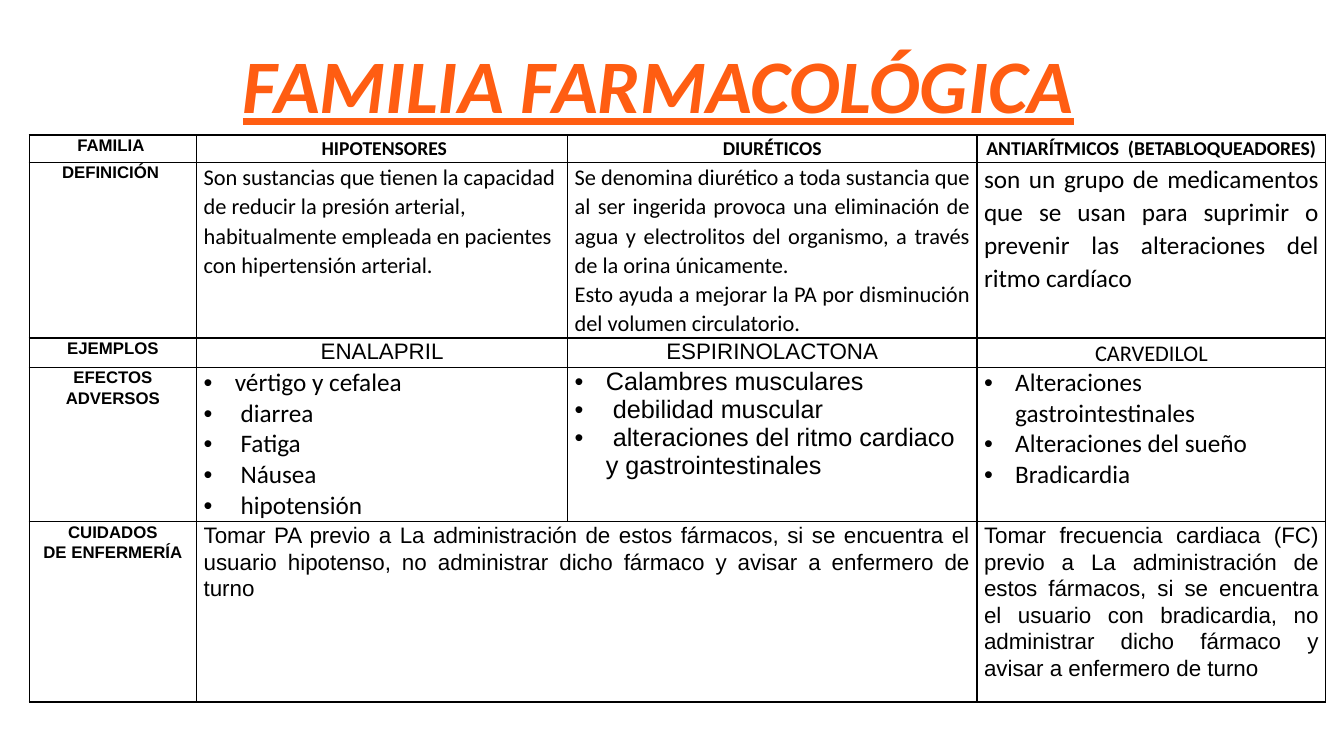
from lxml.etree import SubElement
from pptx import Presentation
from pptx.dml.color import RGBColor
from pptx.enum.text import MSO_AUTO_SIZE, PP_ALIGN
from pptx.oxml.ns import qn
from pptx.util import Inches, Pt

BLACK = RGBColor(0x00, 0x00, 0x00)
ORANGE = RGBColor(0xFF, 0x5D, 0x12)

COLUMN_WIDTHS = (1.66, 3.68, 4.06, 3.46)
ROW_HEIGHTS = (0.27, 1.74, 0.29, 1.53, 1.79)

LABEL = dict(size=12, font="Arial", bold=True)
HEADING = dict(size=14, font="Calibri", bold=True)
CENTERED = dict(size=16, font="Arial")
JUSTIFIED = dict(size=16, font="Arial", align=PP_ALIGN.JUSTIFY)
CALIBRI_LIST = dict(size=18, font="Calibri", bullet=True)

FAMILIES = [
    [
        (["FAMILIA "], LABEL),
        ([" HIPOTENSORES"], HEADING),
        (["DIURÉTICOS"], HEADING),
        (["ANTIARÍTMICOS  (BETABLOQUEADORES)"], HEADING),
    ],
    [
        (["DEFINICIÓN "], LABEL),
        (["Son sustancias que tienen la capacidad de reducir la presión arterial, "
          "habitualmente empleada en pacientes con hipertensión arterial."],
         dict(size=16, font="Calibri", align=PP_ALIGN.LEFT)),
        (["Se denomina diurético a toda sustancia que al ser ingerida provoca una "
          "eliminación de agua y electrolitos del organismo, a través de la orina únicamente.",
          "Esto ayuda a mejorar la PA por disminución del volumen circulatorio."],
         dict(size=16, font="Calibri", align=PP_ALIGN.JUSTIFY)),
        (["son un grupo de medicamentos que se usan para suprimir o prevenir "
          "las alteraciones del ritmo cardíaco"],
         dict(size=18, font="Calibri", align=PP_ALIGN.JUSTIFY)),
    ],
    [
        (["EJEMPLOS"], LABEL),
        (["ENALAPRIL"], CENTERED),
        (["ESPIRINOLACTONA"], CENTERED),
        (["CARVEDILOL"], dict(size=16, font="Calibri")),
    ],
    [
        (["EFECTOS ADVERSOS"], LABEL),
        (["vértigo y cefalea", " diarrea", " Fatiga", " Náusea", " hipotensión"], CALIBRI_LIST),
        (["Calambres musculares", " debilidad muscular",
          " alteraciones del ritmo cardiaco  y gastrointestinales"],
         dict(size=18, font="Arial", bullet=True)),
        (["Alteraciones gastrointestinales", "Alteraciones del sueño", "Bradicardia"],
         CALIBRI_LIST),
    ],
    [
        (["CUIDADOS", "DE ENFERMERÍA"], LABEL),
        (["Tomar PA previo a La administración de estos fármacos, si se encuentra el usuario "
          "hipotenso, no administrar dicho fármaco y avisar a enfermero de turno"], JUSTIFIED),
        None,
        (["Tomar frecuencia cardiaca (FC) previo a La administración de estos fármacos, "
          "si se encuentra el usuario con bradicardia, no administrar dicho fármaco "
          "y avisar a enfermero de turno"], JUSTIFIED),
    ],
]


class FamilySlide:
    """Draws the title and the bordered table of drug families on one slide."""

    def __init__(self, slide):
        self.slide = slide

    def title(self, text, left, top, width, height):
        box = self.slide.shapes.add_textbox(
            Inches(left), Inches(top), Inches(width), Inches(height))
        frame = box.text_frame
        frame.word_wrap = False
        frame.auto_size = MSO_AUTO_SIZE.SHAPE_TO_FIT_TEXT
        line = frame.paragraphs[0]
        line.text = text
        line.alignment = PP_ALIGN.CENTER
        self.style(line, 54, "Calibri", True, ORANGE)
        line.font.italic = line.font.underline = True

    def table(self, left, top, widths, heights, rows):
        grid = self.slide.shapes.add_table(
            len(heights), len(widths), Inches(left), Inches(top),
            Inches(sum(widths)), Inches(sum(heights))).table
        grid.first_row = grid.horz_banding = False
        for column, width in zip(grid.columns, widths):
            column.width = Inches(width)
        for row, height in zip(grid.rows, heights):
            row.height = Inches(height)
        for r, row in enumerate(rows):
            for c, content in enumerate(row):
                cell = grid.cell(r, c)
                self.frame_cell(cell)
                if content is None:
                    grid.cell(r, c - 1).merge(cell)
                else:
                    texts, look = content
                    self.fill_cell(cell, texts, **look)

    def frame_cell(self, cell):
        cell.margin_left = cell.margin_right = Inches(0.07)
        cell.margin_top = cell.margin_bottom = 0
        properties = cell._tc.get_or_add_tcPr()
        for side in ("a:lnL", "a:lnR", "a:lnT", "a:lnB"):
            border = SubElement(properties, qn(side), w=str(Pt(1)))
            fill = SubElement(border, qn("a:solidFill"))
            SubElement(fill, qn("a:srgbClr"), val=str(BLACK))
        cell.fill.background()

    def fill_cell(self, cell, texts, size, font, bold=False,
                  align=PP_ALIGN.CENTER, bullet=False):
        cell.text = "\n".join(texts)
        for line in cell.text_frame.paragraphs:
            self.style(line, size, font, bold, BLACK)
            if bullet:
                self.bullet(line)
            else:
                line.alignment = align
                line.line_spacing = 1.07

    def style(self, line, size, font, bold, color):
        line.font.size = Pt(size)
        line.font.name = font
        line.font.bold = bold
        line.font.color.rgb = color

    def bullet(self, line):
        properties = line._p.get_or_add_pPr()
        properties.set("marL", str(Inches(0.31)))
        properties.set("indent", str(-Inches(0.31)))
        marker_font = properties.makeelement(qn("a:buFont"), {"typeface": "Arial"})
        marker = properties.makeelement(qn("a:buChar"), {"char": "•"})
        properties.insert(0, marker_font)
        properties.insert(1, marker)


def main():
    deck = Presentation()
    deck.slide_width, deck.slide_height = Inches(13.33), Inches(7.5)
    page = FamilySlide(deck.slides.add_slide(deck.slide_layouts[6]))
    page.table(0.29, 1.34, COLUMN_WIDTHS, ROW_HEIGHTS, FAMILIES)
    page.title("FAMILIA FARMACOLÓGICA", 2.25, 0.33, 8.56, 1.01)
    deck.save("out.pptx")


if __name__ == "__main__":
    main()
